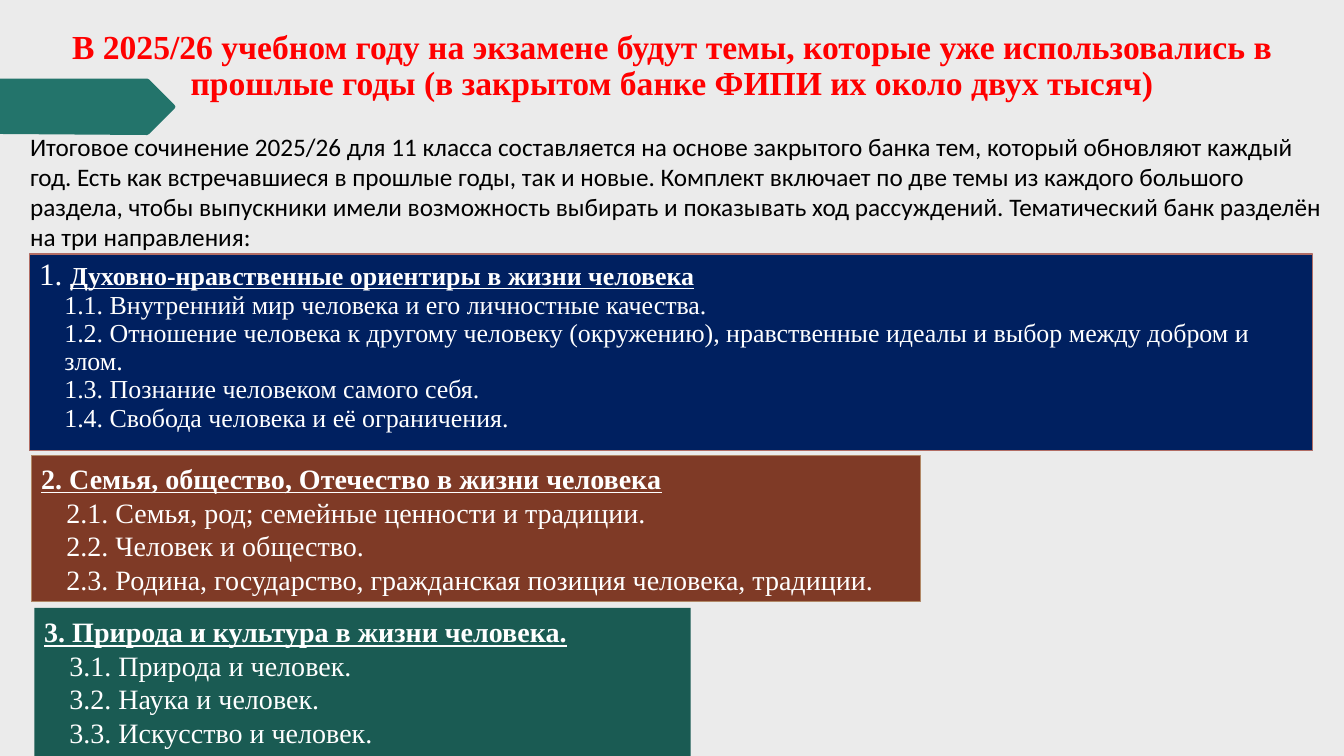
import pptx
import pptx.util
import pptx.dml.color
import pptx.enum.shapes
import pptx.enum.text

Inches = pptx.util.Inches
RGBColor = pptx.dml.color.RGBColor
Align = pptx.enum.text.PP_ALIGN
Anchor = pptx.enum.text.MSO_ANCHOR

GREY = RGBColor(0xEB, 0xEB, 0xEB)
TEAL = RGBColor(0x23, 0x74, 0x6B)
GREEN = RGBColor(0x1A, 0x5B, 0x53)
NAVY = RGBColor(0x00, 0x20, 0x60)
BROWN = RGBColor(0x7F, 0x3A, 0x26)
ROSE = RGBColor(0xB1, 0x6D, 0x65)
SAND = RGBColor(0xB1, 0x88, 0x66)
RED = RGBColor(0xFF, 0x00, 0x00)
WHITE = RGBColor(0xFF, 0xFF, 0xFF)
BLACK = RGBColor(0x00, 0x00, 0x00)


def write(para, text, size=20, color=WHITE, font="Times New Roman", bold=False, under=False):
    run = para.add_run()
    run.text = text
    run.font.size = pptx.util.Pt(size)
    run.font.name = font
    run.font.color.rgb = color
    run.font.bold = bold
    run.font.underline = under


class Page:
    """Draws the elements of one slide in a shared style."""

    def __init__(self, slide):
        self.slide = slide
        slide.background.fill.solid()
        slide.background.fill.fore_color.rgb = GREY

    def paint(self, shape, fill, line=None):
        shape.shadow.inherit = False
        shape.fill.solid()
        shape.fill.fore_color.rgb = fill
        if line is None:
            shape.line.fill.background()
        else:
            shape.line.color.rgb = line
            shape.line.width = pptx.util.Pt(1)

    def arrow(self, points, fill):
        spots = [(Inches(x), Inches(y)) for x, y in points]
        form = self.slide.shapes.build_freeform(*spots[0])
        form.add_line_segments(spots[1:], close=True)
        self.paint(form.convert_to_shape(), fill)

    def label(self, box, text, align=Align.LEFT, space=1.0, **style):
        frame = self.slide.shapes.add_textbox(*map(Inches, box)).text_frame
        frame.word_wrap = True
        para = frame.paragraphs[0]
        para.alignment = align
        para.line_spacing = space
        write(para, text, **style)

    def panel(self, box, fill, line, head, items, size=20, space=1.0, anchor=Anchor.MIDDLE):
        kind = pptx.enum.shapes.MSO_SHAPE.RECTANGLE
        shape = self.slide.shapes.add_shape(kind, *map(Inches, box))
        self.paint(shape, fill, line)
        frame = shape.text_frame
        frame.word_wrap = True
        frame.vertical_anchor = anchor
        para = frame.paragraphs[0]
        para.alignment = Align.LEFT
        para.line_spacing = space
        props = para._p.get_or_add_pPr()
        props.set("marL", str(Inches(0.25)))
        props.set("indent", str(Inches(-0.25)))
        for text, style in head:
            write(para, text, **style)
        for item in items:
            para.add_line_break()
            write(para, item, size=size)


def main():
    deck = pptx.Presentation()
    deck.slide_width = Inches(13.33)
    deck.slide_height = Inches(7.5)
    page = Page(deck.slides.add_slide(deck.slide_layouts[6]))
    bold = dict(bold=True, under=True)

    page.arrow([(0, 0.78), (1.46, 0.78), (1.48, 0.79), (1.73, 1.04), (1.74, 1.06),
                (1.73, 1.08), (1.48, 1.33), (1.46, 1.34), (0, 1.33)], TEAL)
    page.label((0, 0.25, 13.33, 1.02),
               "В 2025/26 учебном году на экзамене будут темы, которые уже использовались "
               "в прошлые годы (в закрытом банке ФИПИ их около двух тысяч)",
               align=Align.CENTER, space=0.9, size=24, color=RED, bold=True)
    page.panel((0.29, 2.52, 12.73, 1.95), NAVY, ROSE,
               [("1. ", dict(size=22.2)),
                ("Духовно-нравственные ориентиры в жизни человека", dict(size=18.5, **bold))],
               ["1.1. Внутренний мир человека и его личностные качества.",
                "1.2. Отношение человека к другому человеку (окружению), "
                "нравственные идеалы и выбор между добром и злом.",
                "1.3. Познание человеком самого себя.",
                "1.4. Свобода человека и её ограничения."],
               size=18.5, space=0.9, anchor=Anchor.TOP)
    page.label((0.2, 1.25, 13.14, 1.62),
               "Итоговое сочинение 2025/26 для 11 класса составляется на основе закрытого "
               "банка тем, который обновляют каждый год. Есть как встречавшиеся в прошлые "
               "годы, так и новые. Комплект включает по две темы из каждого большого раздела, "
               "чтобы выпускники имели возможность выбирать и показывать ход рассуждений. "
               "Тематический банк разделён на три направления:",
               size=18, color=BLACK, font="Calibri")
    page.panel((0.34, 6.03, 6.51, 1.47), GREEN, None,
               [("3. Природа и культура в жизни человека.", bold)],
               ["3.1. Природа и человек.",
                "3.2. Наука и человек.",
                "3.3. Искусство и человек."])
    page.panel((0.31, 4.52, 8.82, 1.45), BROWN, SAND,
               [("2. Семья, общество, Отечество в жизни человека", bold)],
               ["2.1. Семья, род; семейные ценности и традиции.",
                "2.2. Человек и общество.",
                "2.3. Родина, государство, гражданская позиция человека, традиции."])
    deck.save("out.pptx")


if __name__ == "__main__":
    main()
